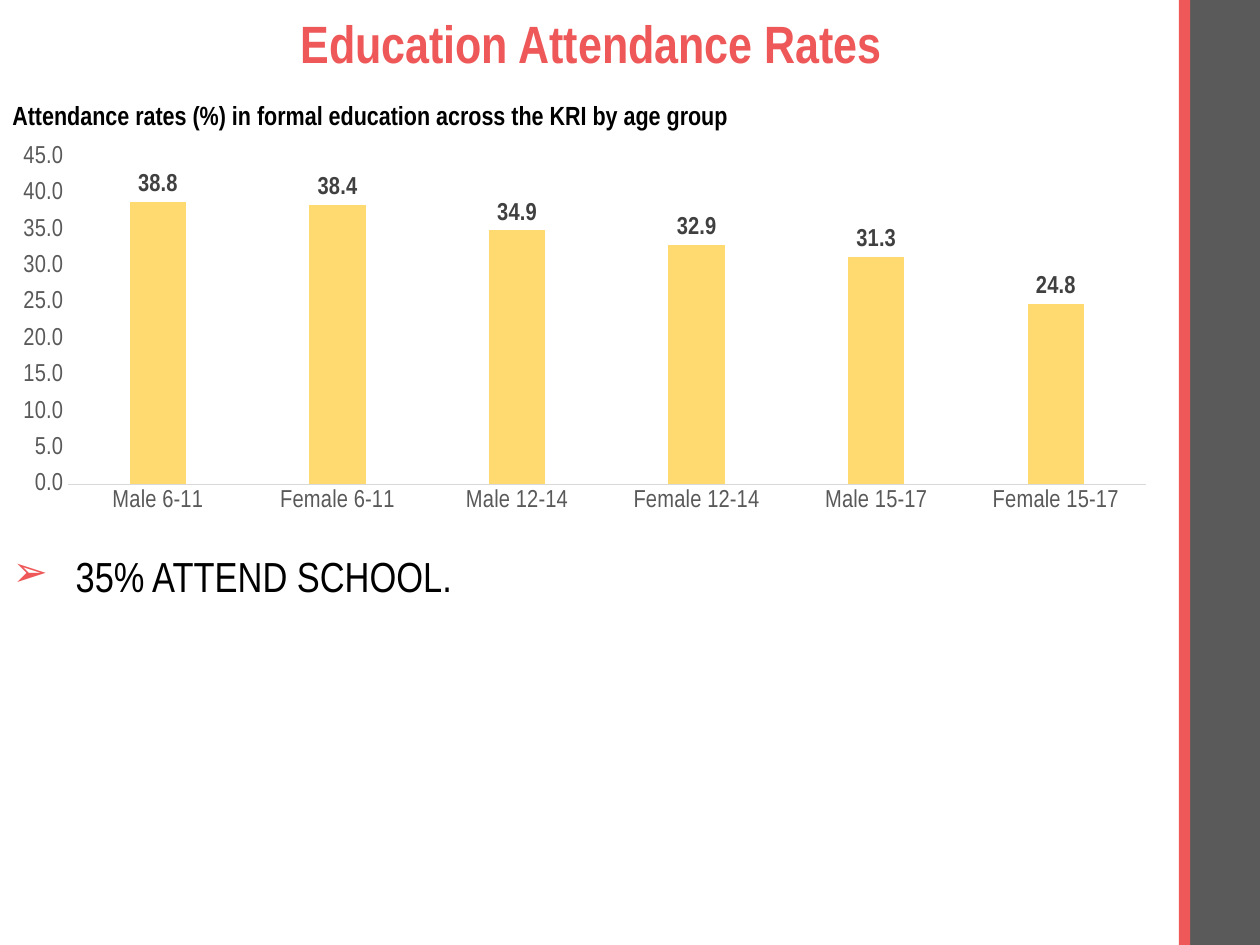
from dataclasses import dataclass

from lxml import etree
from pptx import Presentation
from pptx.chart.data import CategoryChartData
from pptx.dml.color import RGBColor
from pptx.enum.chart import XL_CHART_TYPE, XL_LABEL_POSITION, XL_TICK_MARK
from pptx.enum.shapes import MSO_SHAPE
from pptx.enum.text import MSO_ANCHOR, PP_ALIGN
from pptx.oxml.ns import qn
from pptx.util import Pt

COLUMNS = XL_CHART_TYPE.COLUMN_CLUSTERED
OUTSIDE_END = XL_LABEL_POSITION.OUTSIDE_END
NO_TICK = XL_TICK_MARK.NONE
RECTANGLE = MSO_SHAPE.RECTANGLE
MIDDLE, TOP = MSO_ANCHOR.MIDDLE, MSO_ANCHOR.TOP
CENTER, LEFT = PP_ALIGN.CENTER, PP_ALIGN.LEFT

FONT = "Arial Narrow"
WIDTH, HEIGHT = 720, 540
COLORS = {
    "gray": "5A5A5A",
    "red": "EE5859",
    "yellow": "FFDA71",
    "black": "000000",
    "axis_text": "595959",
    "axis_line": "D9D9D9",
    "label": "404040",
}
ATTENDANCE = {
    "Male 6-11": 38.8,
    "Female 6-11": 38.4,
    "Male 12-14": 34.9,
    "Female 12-14": 32.9,
    "Male 15-17": 31.3,
    "Female 15-17": 24.8,
}


@dataclass
class Box:
    left: float
    top: float
    width: float
    height: float

    def lengths(self) -> tuple:
        return Pt(self.left), Pt(self.top), Pt(self.width), Pt(self.height)


@dataclass
class Stripe:
    box: Box
    color: str


STRIPES = [
    Stripe(Box(680, 0, 40, HEIGHT), "gray"),
    Stripe(Box(673.6, 0, 6.5, HEIGHT), "red"),
]


def rgb(name: str) -> RGBColor:
    return RGBColor.from_string(COLORS[name])


def set_font(font, size: float, color: str, bold: bool = False) -> None:
    font.name = FONT
    font.size = Pt(size)
    font.bold = bold
    font.color.rgb = rgb(color)


def place(shape, box: Box) -> None:
    shape.left, shape.top, shape.width, shape.height = box.lengths()


def draw_stripe(slide, stripe: Stripe) -> None:
    band = slide.shapes.add_shape(RECTANGLE, *stripe.box.lengths())
    band.shadow.inherit = False
    band.fill.solid()
    band.fill.fore_color.rgb = rgb(stripe.color)
    band.line.fill.background()


def add_bullet(paragraph, symbol: str, color: str, indent: float) -> None:
    properties = paragraph._p.get_or_add_pPr()
    properties.set("marL", str(Pt(indent)))
    properties.set("indent", str(-Pt(indent)))
    bullet_color = etree.SubElement(properties, qn("a:buClr"))
    etree.SubElement(bullet_color, qn("a:srgbClr"), val=COLORS[color])
    etree.SubElement(properties, qn("a:buFont"), typeface="Wingdings 2")
    properties[-1].set("typeface", FONT)
    etree.SubElement(properties, qn("a:buChar"), char=symbol)


def draw_title(slide) -> None:
    title = slide.shapes.title
    place(title, Box(25, 0, 626, 53))
    title.text_frame.text = "Education Attendance Rates"
    title.text_frame.vertical_anchor = MIDDLE
    heading = title.text_frame.paragraphs[0]
    heading.alignment = CENTER
    heading.line_spacing = 0.9
    set_font(heading.font, 30, "red", bold=True)


def draw_caption(slide) -> None:
    caption = slide.shapes.add_textbox(*Box(0, 53.3, 629, 25).lengths())
    caption.text_frame.word_wrap = True
    line = caption.text_frame.paragraphs[0]
    line.text = "Attendance rates (%) in formal education across the KRI by age group"
    set_font(line.font, 15, "black", bold=True)


def draw_chart(slide) -> None:
    data = CategoryChartData(number_format="0.0")
    data.categories = list(ATTENDANCE)
    data.add_series("Series 1", list(ATTENDANCE.values()))
    box = Box(0, 78.5, 668, 219)
    chart = slide.shapes.add_chart(COLUMNS, *box.lengths(), data).chart
    chart.has_title = False
    chart.has_legend = False
    set_font(chart.font, 14, "black")

    # Axes
    for axis in (chart.category_axis, chart.value_axis):
        axis.major_tick_mark = axis.minor_tick_mark = NO_TICK
        axis.has_major_gridlines = False
        set_font(axis.tick_labels.font, 14, "axis_text")
    category_line = chart.category_axis.format.line
    category_line.color.rgb = rgb("axis_line")
    category_line.width = Pt(0.75)
    rates = chart.value_axis
    rates.format.line.fill.background()
    rates.minimum_scale, rates.maximum_scale, rates.major_unit = 0, 45, 5
    rates.tick_labels.number_format = "0.0"
    rates.tick_labels.number_format_is_linked = False

    # Columns and their labels
    plot = chart.plots[0]
    plot.gap_width, plot.overlap = 219, -27
    plot.vary_by_categories = False
    columns = plot.series[0]
    columns.format.fill.solid()
    columns.format.fill.fore_color.rgb = rgb("yellow")
    labels = columns.data_labels
    labels.show_value = True
    labels.position = OUTSIDE_END
    labels.number_format = "0.0"
    labels.number_format_is_linked = False
    set_font(labels.font, 14, "label", bold=True)


def draw_finding(slide) -> None:
    body = slide.placeholders[1]
    place(body, Box(0, 314, 677, 225))
    body.text_frame.text = "35% ATTEND SCHOOL."
    body.text_frame.vertical_anchor = TOP
    finding = body.text_frame.paragraphs[0]
    finding.level = 1
    add_bullet(finding, "➢", "red", 36)
    finding.alignment = LEFT
    finding.line_spacing = 0.9
    finding.space_before = Pt(0)
    set_font(finding.font, 24, "black")


def main() -> None:
    deck = Presentation()
    deck.slide_width, deck.slide_height = Pt(WIDTH), Pt(HEIGHT)
    slide = deck.slides.add_slide(deck.slide_layouts[1])
    for stripe in STRIPES:
        draw_stripe(slide, stripe)
    draw_title(slide)
    draw_caption(slide)
    draw_chart(slide)
    draw_finding(slide)
    deck.save("out.pptx")


if __name__ == "__main__":
    main()
